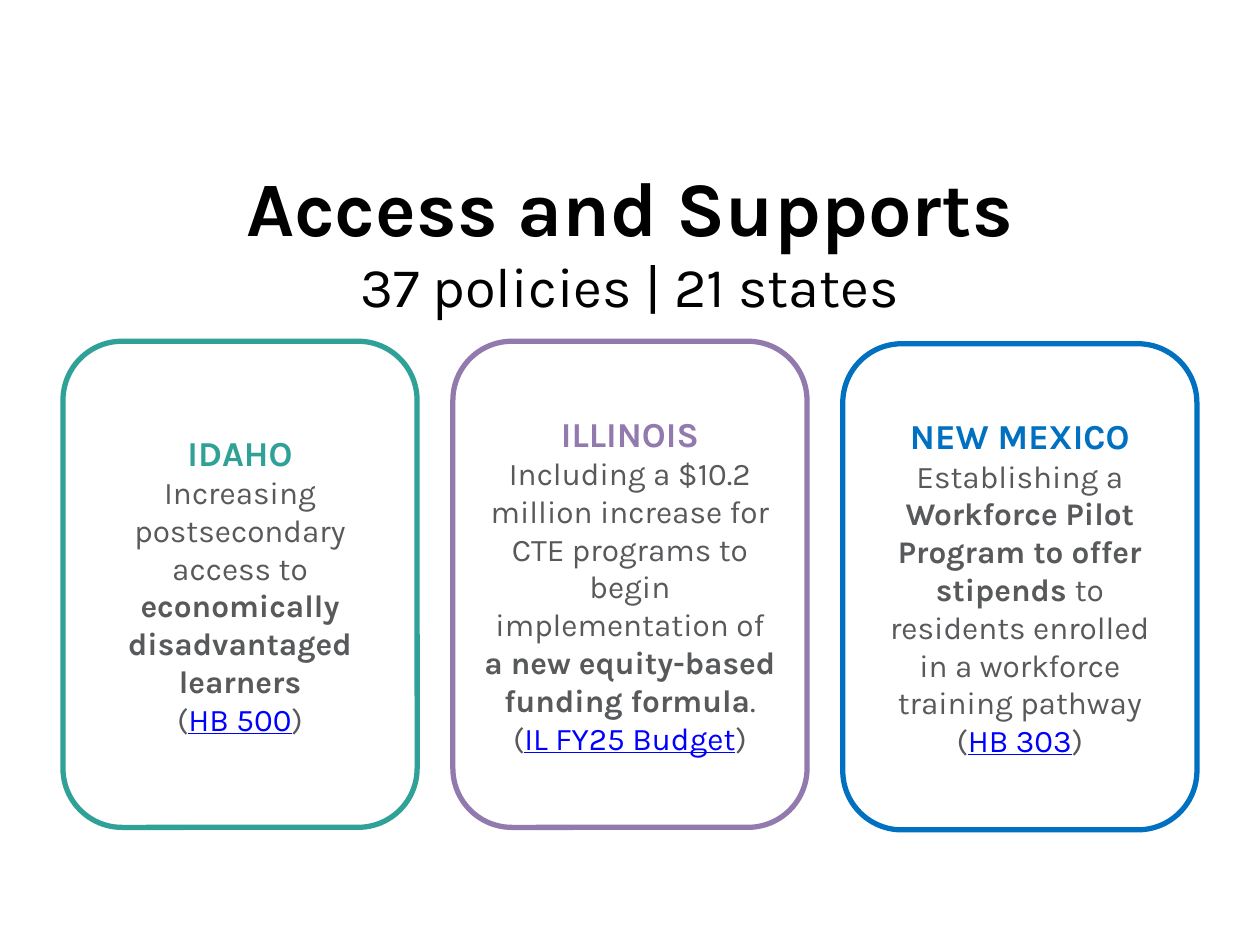
from lxml import etree
from pptx import Presentation
from pptx.dml.color import RGBColor
from pptx.enum.shapes import MSO_SHAPE
from pptx.enum.text import MSO_ANCHOR, MSO_AUTO_SIZE, PP_ALIGN
from pptx.oxml.ns import qn
from pptx.util import Cm, Pt

ROUND = MSO_SHAPE.ROUNDED_RECTANGLE
MID, TOP = MSO_ANCHOR.MIDDLE, MSO_ANCHOR.TOP
FIXED = MSO_AUTO_SIZE.NONE
CENTER = PP_ALIGN.CENTER

FONT = "Karla"
HUES = {
    "black": "000000", "white": "FFFFFF", "grey": "58595B", "link": "0000FF",
    "teal": "2FA196", "mauve": "927AAE", "blue": "0070C0",
}


def rgb(name):
    return RGBColor.from_string(HUES[name])


def style(run, size, hue, bold=False, line=False):
    font = run.font
    font.name, font.size, font.bold = FONT, Pt(size), bold
    font.underline = line
    font.color.rgb = rgb(hue)


deck = Presentation()
deck.slide_width, deck.slide_height = Cm(25.4), Cm(19.05)
slide = deck.slides.add_slide(deck.slide_layouts[1])

# Title and subtitle
heads = [
    (slide.shapes.title, "Access and Supports", 2.74, 2.82, 44, True, MID),
    (slide.placeholders[1], "37 policies | 21 states", 4.95, 1.65, 32, False, TOP),
]
for box, text, top, high, size, bold, anchor in heads:
    box.left, box.top, box.width, box.height = Cm(1.27), Cm(top), Cm(22.86), Cm(high)
    frame = box.text_frame
    frame.text = text
    frame.auto_size, frame.vertical_anchor = FIXED, anchor
    para = frame.paragraphs[0]
    props = para._p.get_or_add_pPr()
    props.set("marL", "0")
    props.set("indent", "0")
    etree.SubElement(props, qn("a:buNone"))
    para.alignment, para.space_before = CENTER, Pt(0)
    style(para.runs[0], size, "black", bold)

# State cards: name, hue, top, parts of the text (text, bold), bill
cards = [
    ("IDAHO", "teal", 6.88,
     [("Increasing postsecondary access to ", False),
      ("economically disadvantaged learners", True)],
     "HB 500"),
    ("ILLINOIS", "mauve", 6.88,
     [("Including a $10.2 million increase for CTE programs to begin "
       "implementation of ", False),
      ("a new equity-based funding formula", True),
      (".", False)],
     "IL FY25 Budget"),
    ("NEW MEXICO", "blue", 6.93,
     [("Establishing a ", False),
      ("Workforce Pilot Program to offer stipends ", True),
      ("to residents enrolled in a workforce training pathway", False)],
     "HB 303"),
]
for i, (state, hue, top, parts, bill) in enumerate(cards):
    card = slide.shapes.add_shape(
        ROUND, Cm(1.27 + 7.86 * i), Cm(top), Cm(7.14), Cm(9.8))
    card.shadow.inherit = False
    card.fill.solid()
    card.fill.fore_color.rgb = rgb("white")
    card.line.color.rgb = rgb(hue)
    card.line.width = Pt(3)
    frame = card.text_frame
    frame.word_wrap, frame.vertical_anchor = True, MID

    rows = [
        [(state, 20, hue, True, False)],
        [(text, 18, "grey", bold, False) for text, bold in parts],
        [("(", 18, "grey", False, False),
         (bill, 18, "link", False, True),
         (")", 18, "grey", False, False)],
    ]
    for n, row in enumerate(rows):
        para = frame.add_paragraph() if n else frame.paragraphs[0]
        para.alignment = CENTER
        for text, *look in row:
            run = para.add_run()
            run.text = text
            style(run, *look)

deck.save("out.pptx")
